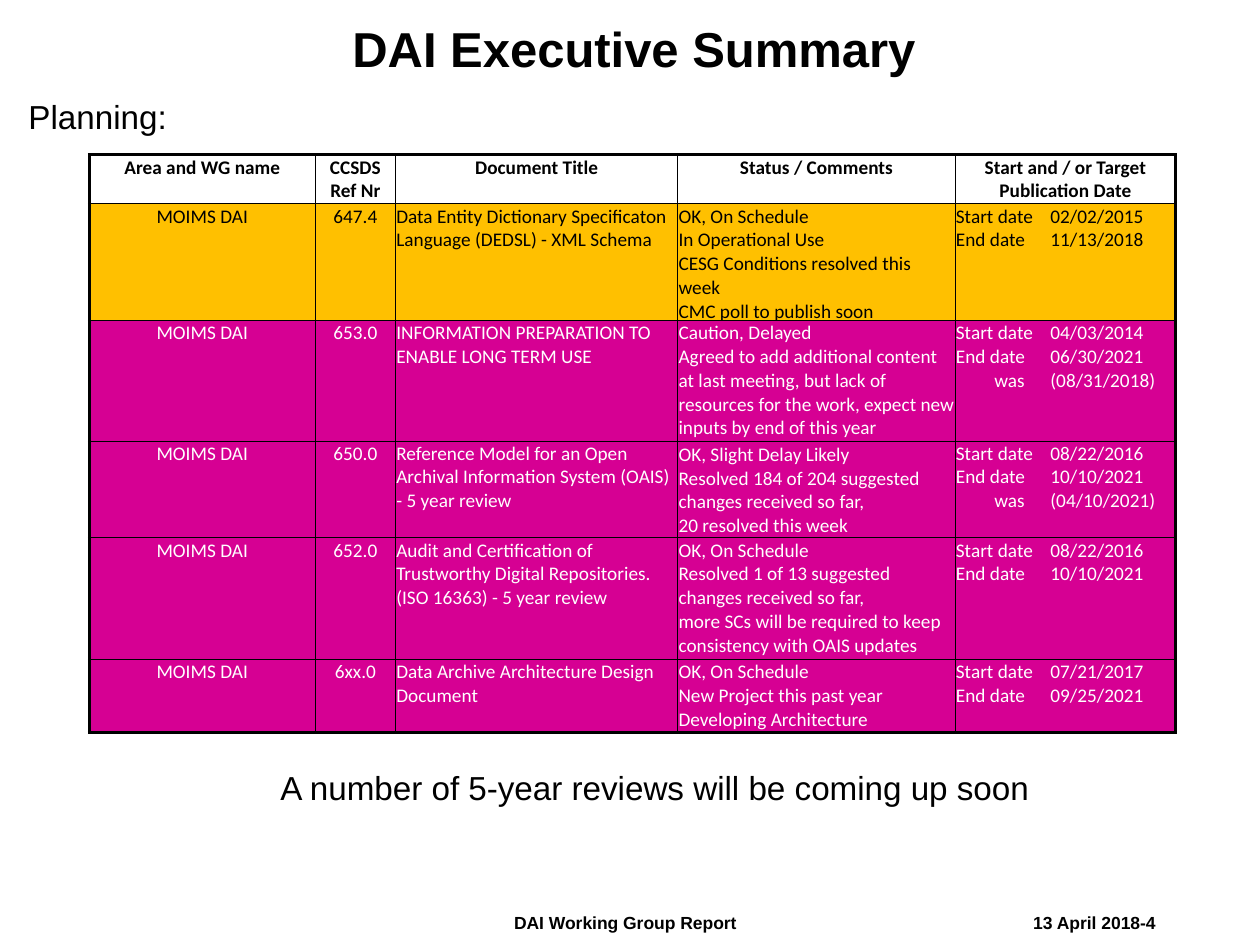
from lxml.etree import SubElement
from pptx import Presentation
from pptx.dml.color import RGBColor
from pptx.enum.text import MSO_ANCHOR as Anchor, PP_ALIGN as Align
from pptx.oxml.ns import qn
from pptx.util import Pt

BLACK = RGBColor(0x00, 0x00, 0x00)
WHITE = RGBColor(0xFF, 0xFF, 0xFF)
AMBER = RGBColor(0xFF, 0xC0, 0x00)
MAGENTA = RGBColor(0xD6, 0x00, 0x93)

TITLE = {"size": Pt(28), "name": "Arial", "bold": True}
BODY = {"size": Pt(19), "name": "Arial", "bold": False}
FOOTER = {"size": Pt(10), "name": "Arial", "bold": True}
HEADING = {"size": Pt(11), "name": "Calibri", "bold": True}
ENTRY = {"size": Pt(11), "name": "Calibri", "bold": False}

COLUMN_WIDTHS = [129, 46, 161.3, 158.5, 126]
ROW_HEIGHTS = [28, 66.7, 68.8, 55.4, 69.6, 41.8]
DATE_TABS = [22, 54]
HEADINGS = ["Area and WG name", "CCSDS Ref Nr", "Document Title",
            "Status / Comments", "Start and / or Target Publication Date"]
# Reference, title, status, dates, fill, text colour, status anchor
PROJECTS = [
    ("647.4", "Data Entity Dictionary Specificaton Language (DEDSL) - XML Schema",
     "OK, On Schedule\nIn Operational Use\nCESG Conditions resolved this week\n"
     "CMC poll to publish soon",
     "Start date\t02/02/2015\nEnd date\t11/13/2018", AMBER, BLACK, Anchor.TOP),
    ("653.0", "INFORMATION PREPARATION TO ENABLE LONG TERM USE",
     "Caution, Delayed\nAgreed to add additional content at last meeting, but lack of "
     "resources for the work, expect new inputs by end of this year",
     "Start date\t04/03/2014\nEnd date\t06/30/2021\n\twas\t(08/31/2018)",
     MAGENTA, WHITE, Anchor.TOP),
    ("650.0", "Reference Model for an Open Archival Information System (OAIS) - 5 year review",
     "OK, Slight Delay Likely\nResolved 184 of 204 suggested changes received so far,\n"
     "20 resolved this week",
     "Start date\t08/22/2016\nEnd date\t10/10/2021\n\twas\t(04/10/2021)",
     MAGENTA, WHITE, Anchor.BOTTOM),
    ("652.0", "Audit and Certification of Trustworthy Digital Repositories. "
     "(ISO 16363) - 5 year review",
     "OK, On Schedule\nResolved 1 of 13 suggested changes received so far,\n"
     "more SCs will be required to keep consistency with OAIS updates",
     "Start date\t08/22/2016\nEnd date\t10/10/2021", MAGENTA, WHITE, Anchor.TOP),
    ("6xx.0", "Data Archive Architecture Design Document",
     "OK, On Schedule\nNew Project this past year\nDeveloping Architecture",
     "Start date\t07/21/2017\nEnd date\t09/25/2021", MAGENTA, WHITE, Anchor.TOP),
]


def write(para, text, style, color=BLACK, align=Align.LEFT):
    para.text = text
    para.alignment = align
    for span in para.runs:
        for name, value in style.items():
            setattr(span.font, name, value)
        span.font.color.rgb = color


def set_margins(target, left, top, right, bottom):
    margins = {"left": left, "top": top, "right": right, "bottom": bottom}
    for side, value in margins.items():
        setattr(target, f"margin_{side}", Pt(value))


def indent(para, left):
    properties = para._p.get_or_add_pPr()
    properties.set("marL", str(Pt(left)))
    properties.set("indent", "0")


def add_panel(page, left, top, width, height):
    """Add an unfilled, unlined outline and return its text frame."""
    right, bottom = left + width, top + height
    builder = page.shapes.build_freeform(Pt(left), Pt(top))
    builder.add_line_segments([(Pt(x), Pt(y)) for x, y in
                               ((right, top), (right, bottom), (left, bottom))])
    panel = builder.convert_to_shape()
    panel.shadow.inherit = False
    panel.fill.background()
    panel.line.fill.background()
    frame = panel.text_frame
    frame.word_wrap = True
    frame.vertical_anchor = Anchor.TOP
    set_margins(frame, 4.3, 4.3, 4.3, 4.3)
    return frame


def add_title(page, left, top, width, height):
    para = add_panel(page, left, top, width, height).paragraphs[0]
    write(para, "DAI Executive Summary ", TITLE, align=Align.CENTER)
    para.line_spacing = 0.9
    indent(para, 36)


def add_body(page, left, top, width, height):
    """Place the heading above the table and the remark below it."""
    frame = add_panel(page, left, top, width, height)
    heading, remark = frame.paragraphs[0], frame.add_paragraph()
    write(heading, "Planning:", BODY)
    write(remark, "A number of 5-year reviews will be coming up soon", BODY)
    heading.line_spacing = remark.line_spacing = 1.2
    remark.space_before = Pt(356)
    indent(remark, 144)


def add_border(cell, tag, width):
    line = SubElement(cell._tc.get_or_add_tcPr(), qn(f"a:{tag}"), w=str(Pt(width)))
    fill = SubElement(line, qn("a:solidFill"))
    SubElement(fill, qn("a:srgbClr"), val=str(BLACK))


def frame_cell(cell, row, column):
    """Draw thick lines on the outer edge of the table and thin ones inside."""
    edges = {"lnL": column == 0, "lnR": column == len(COLUMN_WIDTHS) - 1,
             "lnT": row == 0, "lnB": row == len(ROW_HEIGHTS) - 1}
    for tag, is_outer in edges.items():
        add_border(cell, tag, 2 if is_outer else 0.5)


def add_date_tabs(para):
    stops = SubElement(para._p.get_or_add_pPr(), qn("a:tabLst"))
    for position in DATE_TABS:
        SubElement(stops, qn("a:tab"), pos=str(Pt(position)), algn="l")


def add_project_table(page, left, top):
    table = page.shapes.add_table(
        len(ROW_HEIGHTS), len(COLUMN_WIDTHS), Pt(left), Pt(top),
        Pt(sum(COLUMN_WIDTHS)), Pt(sum(ROW_HEIGHTS))).table
    table.first_row = table.horz_banding = False
    for column, width in zip(table.columns, COLUMN_WIDTHS):
        column.width = Pt(width)
    for row, height in zip(table.rows, ROW_HEIGHTS):
        row.height = Pt(height)

    lines = [(HEADINGS, WHITE, BLACK, Anchor.TOP)]
    lines += [(("MOIMS DAI", *texts), *look) for *texts, look in
              ((*project[:4], project[4:]) for project in PROJECTS)]
    for row, (texts, fill, color, status_anchor) in enumerate(lines):
        for column, text in enumerate(texts):
            cell = table.cell(row, column)
            set_margins(cell, 0.4, 0.4, 0.4, 0)
            cell.vertical_anchor = status_anchor if column == 3 else Anchor.TOP
            frame_cell(cell, row, column)
            cell.fill.solid()
            cell.fill.fore_color.rgb = fill
            centred = row == 0 or column < 2
            para = cell.text_frame.paragraphs[0]
            write(para, text, ENTRY if row else HEADING, color,
                  Align.CENTER if centred else Align.LEFT)
            if row and column == 4:
                add_date_tabs(para)


def add_footer(page, top):
    for left, width, text in ((583.9, 94.3, "13 April 2018-4"),
                              (287.3, 141.8, "DAI Working Group Report")):
        box = page.shapes.add_textbox(Pt(left), Pt(top), Pt(width), Pt(18.7))
        box.text_frame.word_wrap = False
        set_margins(box.text_frame, 6.5, 3, 6.5, 3)
        write(box.text_frame.paragraphs[0], text, FOOTER)


def main():
    deck = Presentation()
    deck.slide_width, deck.slide_height = Pt(720), Pt(540)
    page = deck.slides.add_slide(deck.slide_layouts[6])
    add_footer(page, 518)
    add_body(page, 12, 46, 698.4, 444.2)
    add_title(page, 69.8, 9.8, 556.6, 41.8)
    add_project_table(page, 51.1, 88.5)
    deck.save("out.pptx")


if __name__ == "__main__":
    main()
